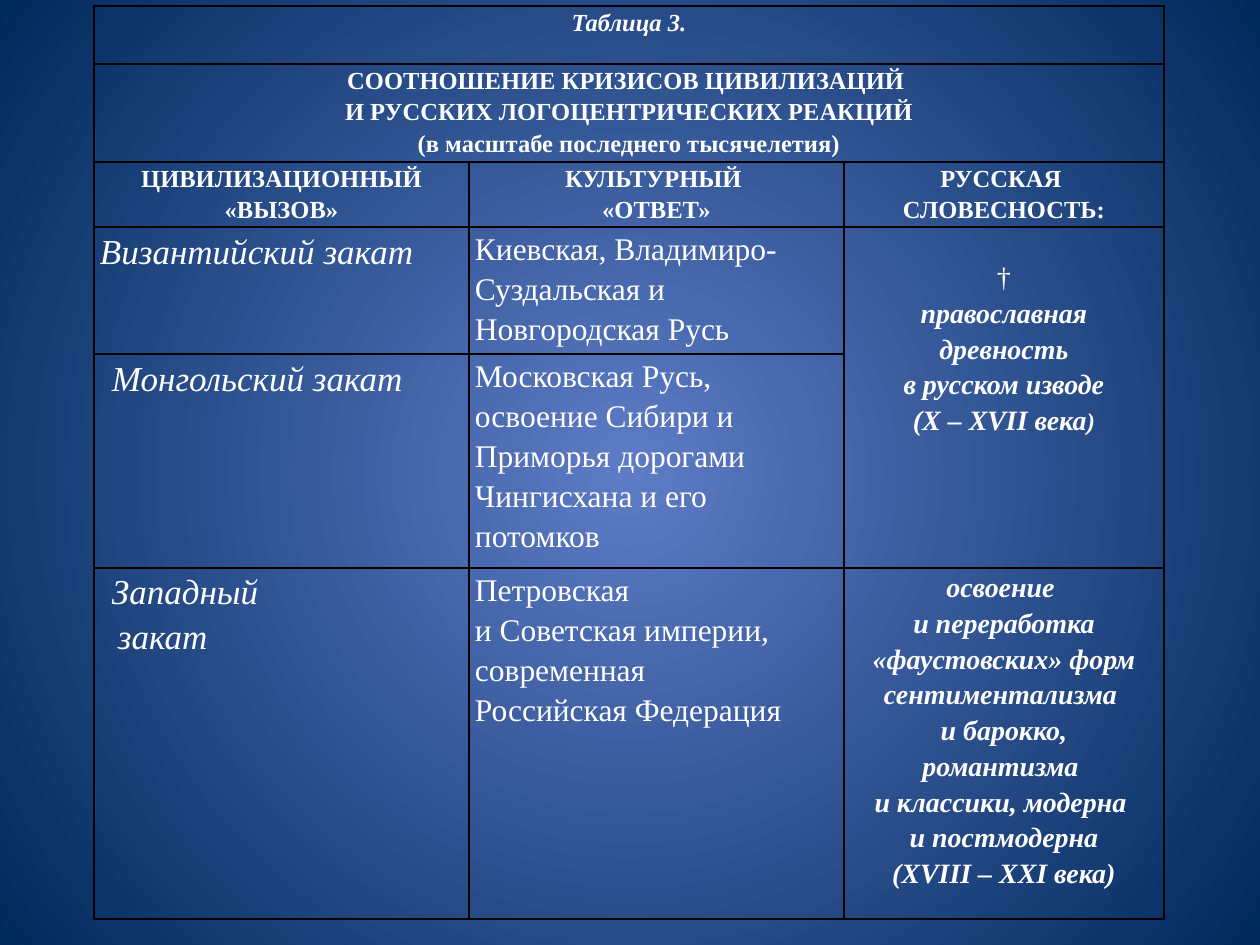
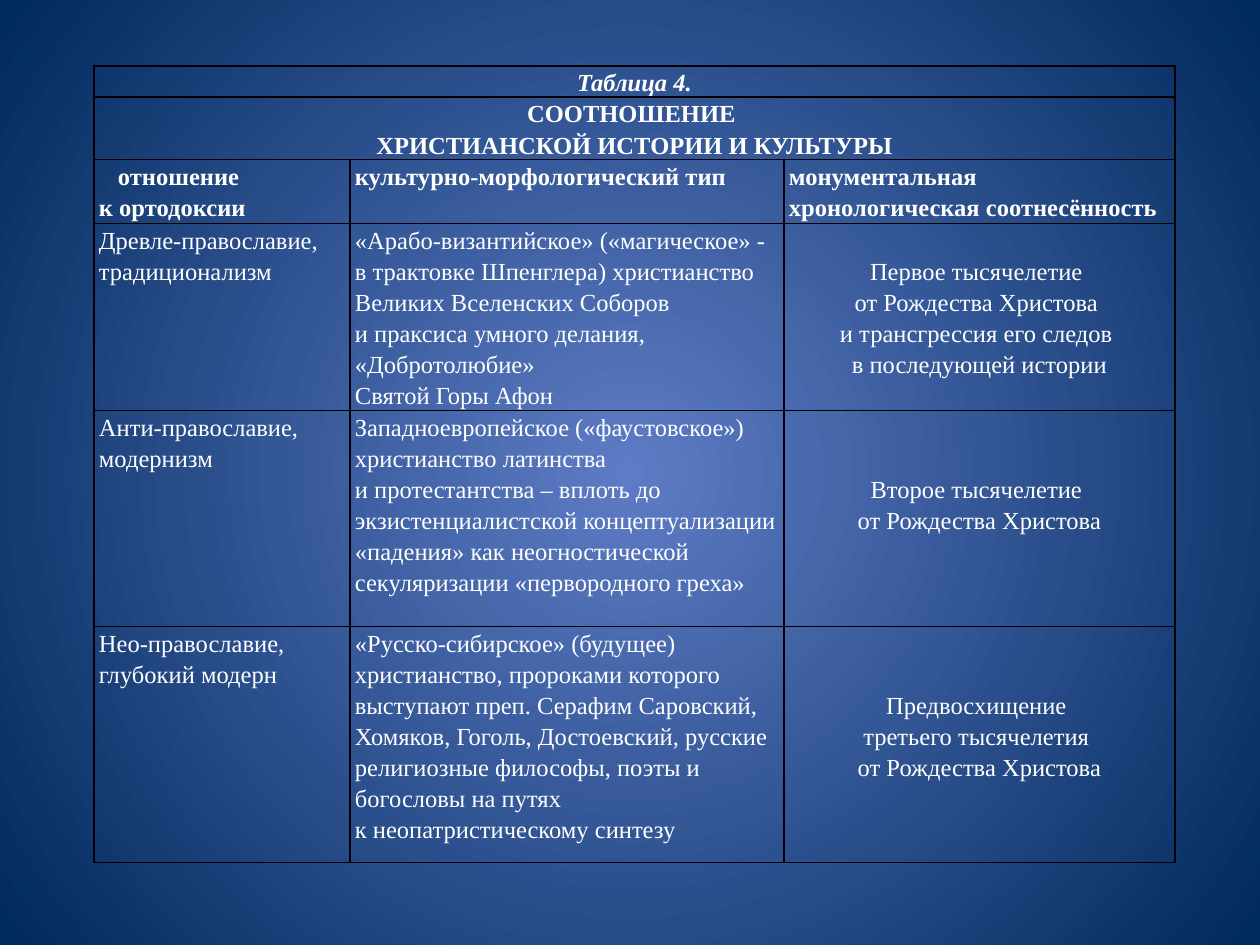
"""Build two slides with tables on the crises of civilisations and Christian culture."""
from pptx import Presentation
from pptx.dml.color import RGBColor
from pptx.enum.text import PP_ALIGN
from pptx.oxml import parse_xml
from pptx.oxml.ns import nsdecls, qn

LEFT, CENTER, JUST = PP_ALIGN.LEFT, PP_ALIGN.CENTER, PP_ALIGN.JUSTIFY
FONT = "Times New Roman"
WHITE, BLACK = "FFFFFF", "000000"
GLOW, NAVY = "5E7CC5", "00295C"
LINE = 31

CAPTION = dict(size=14, bold=True, italic=True, align=CENTER)
HEAD = dict(size=14, bold=True, italic=False, align=CENTER)
SIDE_HEAD = dict(HEAD, align=JUST)
SUNSET = dict(size=20, bold=False, italic=True, align=JUST)
ANSWER = dict(size=18, bold=False, italic=False, align=LEFT)
LETTERS = dict(size=16, bold=True, italic=True, align=CENTER)
PLAIN = dict(size=14, bold=False, italic=False, align=LEFT)
SIDE = dict(PLAIN, align=JUST)
ERA = dict(PLAIN, align=CENTER)


def px(n):
    return round(n * 914400 / 126)


def add_run(p, text, fmt):
    r = p.add_run()
    r.text = text
    r.font.name = FONT
    r.font.color.rgb = RGBColor.from_string(WHITE)
    for name in ("bold", "italic"):
        setattr(r.font, name, fmt[name])
    r.font.size = fmt["size"] * 12700


crises = dict(
    top=6, margin=6,
    cols=[375, 375, 320],
    rows=[58, 98, 65, 127, 214, 351],
    merges=[(0, 0, 0, 2), (1, 0, 1, 2), (3, 2, 4, 2)],
    cells={
        (0, 0): (CAPTION, 0, ["Таблица 3."]),
        (1, 0): (HEAD, 0, [
            "СООТНОШЕНИЕ КРИЗИСОВ ЦИВИЛИЗАЦИЙ ",
            "И РУССКИХ ЛОГОЦЕНТРИЧЕСКИХ РЕАКЦИЙ",
            "(в масштабе последнего тысячелетия)"]),
        (2, 0): (HEAD, 0, ["ЦИВИЛИЗАЦИОННЫЙ", "«ВЫЗОВ»"]),
        (2, 1): (HEAD, 0, ["КУЛЬТУРНЫЙ ", "«ОТВЕТ»"]),
        (2, 2): (HEAD, 0, ["РУССКАЯ ", "СЛОВЕСНОСТЬ:"]),
        (3, 0): (SUNSET, 0, ["Византийский закат"]),
        (3, 1): (ANSWER, 0, [
            "Киевская, Владимиро-Суздальская и Новгородская Русь"]),
        (3, 2): (LETTERS, LINE, [
            ("†", dict(bold=False, italic=False)),
            "православная", "древность", " в русском изводе ",
            ("(Х – ХVII века", dict(tail=")"))]),
        (4, 0): (SUNSET, 0, [("Монгольский закат", dict(indent=12))]),
        (4, 1): (ANSWER, 0, [
            "Московская Русь, освоение Сибири и Приморья дорогами "
            "Чингисхана и его потомков"]),
        (5, 0): (SUNSET, 0, [("Западный ", dict(indent=12)),
                             ("закат", dict(indent=18))]),
        (5, 1): (ANSWER, 0, [
            "Петровская", "и Советская империи,", "современная",
            "Российская Федерация"]),
        (5, 2): (LETTERS, 0, [
            "освоение ", "и переработка «фаустовских» форм",
            "сентиментализма ", "и барокко,", "романтизма ",
            "и классики, модерна ", "и постмодерна",
            "(ХVIII – ХХI века)"]),
    })

culture = dict(
    top=66, margin=5,
    cols=[256, 434, 391],
    rows=[31, 62, 64, 187, 216, 236],
    merges=[(0, 0, 0, 2), (1, 0, 1, 2)],
    cells={
        (0, 0): (CAPTION, 0, ["Таблица 4."]),
        (1, 0): (HEAD, 0, ["СООТНОШЕНИЕ ",
                           "ХРИСТИАНСКОЙ ИСТОРИИ И КУЛЬТУРЫ"]),
        (2, 0): (SIDE_HEAD, 0, [("отношение", dict(indent=19)),
                                "к ортодоксии"]),
        (2, 1): (SIDE_HEAD, 0, ["культурно-морфологический тип"]),
        (2, 2): (SIDE_HEAD, 0, [
            "монументальная хронологическая соотнесённость"]),
        (3, 0): (SIDE, 0, ["Древле-православие, традиционализм"]),
        (3, 1): (PLAIN, 0, [
            "«Арабо-византийское» («магическое» - в трактовке Шпенглера) "
            "христианство",
            "Великих Вселенских Соборов",
            "и праксиса умного делания, «Добротолюбие»",
            "Святой Горы Афон"]),
        (3, 2): (ERA, LINE, [
            "Первое тысячелетие ", "от Рождества Христова ",
            "и трансгрессия его следов ", "в последующей истории"]),
        (4, 0): (SIDE, 0, ["Анти-православие, модернизм"]),
        (4, 1): (PLAIN, 0, [
            "Западноевропейское («фаустовское») христианство латинства",
            "и протестантства – вплоть до экзистенциалистской "
            "концептуализации «падения» как неогностической секуляризации "
            "«первородного греха»"]),
        (4, 2): (ERA, 2 * LINE, ["Второе тысячелетие ",
                                 "от Рождества Христова"]),
        (5, 0): (SIDE, 0, ["Нео-православие, глубокий модерн"]),
        (5, 1): (PLAIN, 0, [
            "«Русско-сибирское» (будущее) христианство, пророками которого "
            "выступают преп. Серафим Саровский, Хомяков, Гоголь, "
            "Достоевский, русские религиозные философы, поэты и богословы "
            "на путях",
            "к неопатристическому синтезу"]),
        (5, 2): (ERA, 2 * LINE, [
            "Предвосхищение ", "третьего тысячелетия ",
            "от Рождества Христова"]),
    })

prs = Presentation()
prs.slide_width, prs.slide_height = px(1260), px(945)

master = prs.slide_master
master.background.fill.solid()
bg = master.element.find(".//" + qn("p:bgPr"))
bg.replace(bg[0], parse_xml(
    f'<a:gradFill {nsdecls("a")} rotWithShape="1"><a:gsLst>'
    f'<a:gs pos="0"><a:srgbClr val="{GLOW}"/></a:gs>'
    f'<a:gs pos="100000"><a:srgbClr val="{NAVY}"/></a:gs></a:gsLst>'
    '<a:path path="circle"><a:fillToRect l="50000" t="50000" r="50000" '
    'b="50000"/></a:path></a:gradFill>'))

for data in (crises, culture):
    s = prs.slides.add_slide(prs.slide_layouts[6])
    cols, rows = data["cols"], data["rows"]
    table = s.shapes.add_table(len(rows), len(cols), px(94), px(data["top"]),
                               px(sum(cols)), px(sum(rows))).table
    table.first_row = table.horz_banding = False
    for col, width in zip(table.columns, cols):
        col.width = px(width)
    for row, height in zip(table.rows, rows):
        row.height = px(height)

    for cell in table.iter_cells():
        cell.fill.background()
        cell.margin_left = cell.margin_right = px(data["margin"])
        cell.margin_top = cell.margin_bottom = 0
        tcPr = cell._tc.get_or_add_tcPr()
        for i, side in enumerate("LRTB"):
            tcPr.insert(i, parse_xml(
                f'<a:ln{side} {nsdecls("a")} w="12700"><a:solidFill>'
                f'<a:srgbClr val="{BLACK}"/></a:solidFill></a:ln{side}>'))

    for r1, c1, r2, c2 in data["merges"]:
        table.cell(r1, c1).merge(table.cell(r2, c2))

    for (row, col), (style, top, paras) in data["cells"].items():
        cell = table.cell(row, col)
        cell.margin_top = px(top)
        tf = cell.text_frame
        for i, para in enumerate(paras):
            text, extra = (para, {}) if isinstance(para, str) else para
            fmt = {**style, **extra}
            p = tf.add_paragraph() if i else tf.paragraphs[0]
            p.alignment = fmt["align"]
            p.line_spacing = 1.15
            if "indent" in fmt:
                p._p.get_or_add_pPr().set("indent", str(px(fmt["indent"])))
            add_run(p, text, fmt)
            if "tail" in fmt:
                add_run(p, fmt["tail"], {**fmt, "size": 14})

prs.save("out.pptx")
